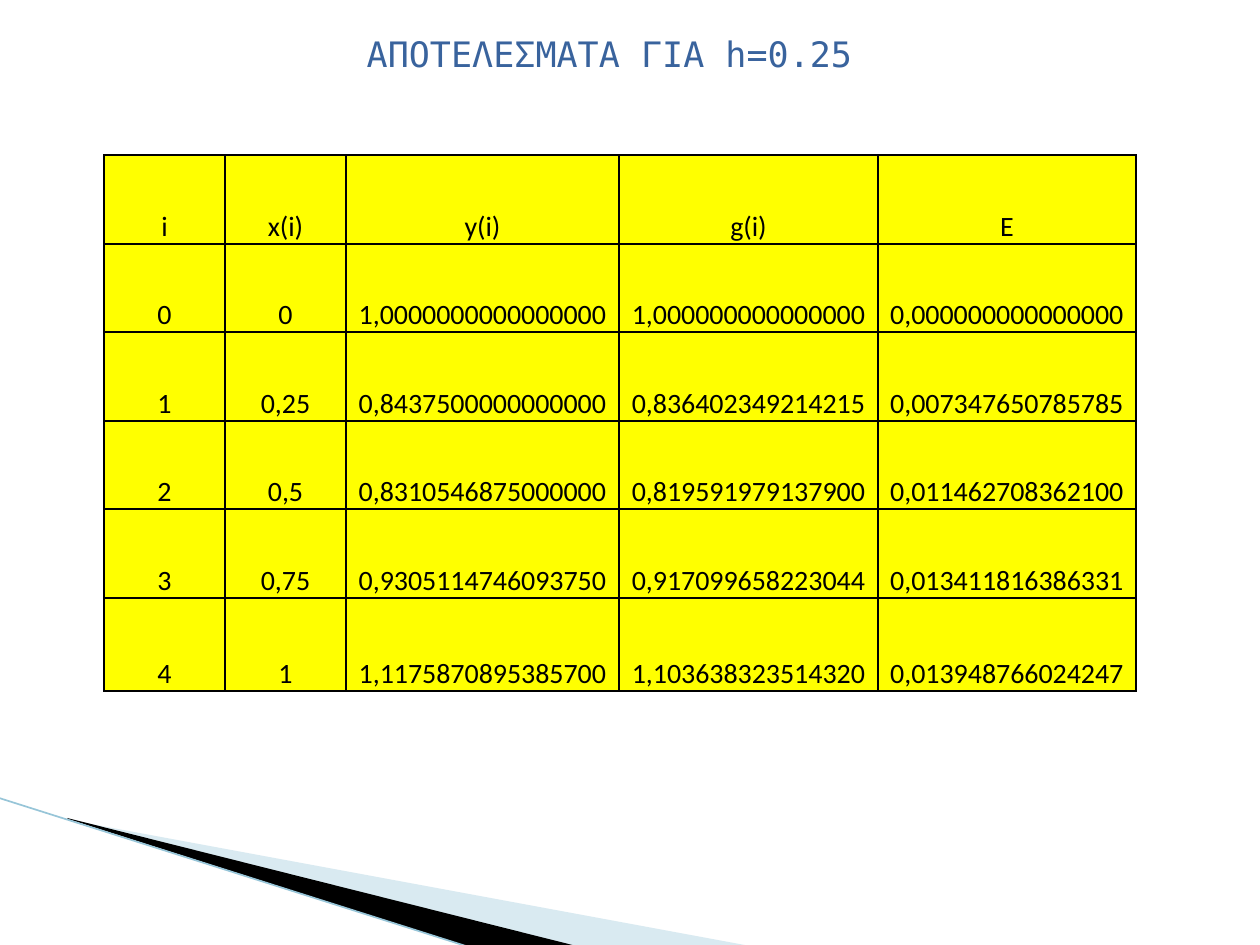
from dataclasses import dataclass

import pptx
import pptx.dml.color
import pptx.enum.shapes
import pptx.enum.text
import pptx.oxml
import pptx.oxml.ns
import pptx.oxml.xmlchemy
import pptx.util
from lxml import etree

RGBColor = pptx.dml.color.RGBColor
BLACK = RGBColor(0x00, 0x00, 0x00)
YELLOW = RGBColor(0xFF, 0xFF, 0x00)
PALE_BLUE = RGBColor(0xA0, 0xCB, 0xDC)
LINE_BLUE = RGBColor(0x97, 0xC5, 0xD8)
TITLE_BLUE = RGBColor(0x39, 0x63, 0x9D)

EMU_PER_PX = 914400 / 126
COLUMN_WIDTHS = (121, 121, 273, 259, 258)
ROW_HEIGHTS = (89, 88, 89, 88, 89, 93)
RESULTS = (
    ("i", "x(i)", "y(i)", "g(i)", "E"),
    ("0", "0", "1,0000000000000000", "1,000000000000000", "0,000000000000000"),
    ("1", "0,25", "0,8437500000000000", "0,836402349214215", "0,007347650785785"),
    ("2", "0,5", "0,8310546875000000", "0,819591979137900", "0,011462708362100"),
    ("3", "0,75", "0,9305114746093750", "0,917099658223044", "0,013411816386331"),
    ("4", "1", "1,1175870895385700", "1,103638323514320", "0,013948766024247"),
)


@dataclass(frozen=True)
class Wedge:
    points: tuple[tuple[int, int], ...]
    color: RGBColor
    opacity: int


WEDGES = (
    Wedge(((69, 820), (750, 946), (575, 946), (69, 819)), PALE_BLUE, 40),
    Wedge(((67, 818), (576, 946), (469, 947), (68, 819)), BLACK, 100),
)


def px(length: int) -> pptx.util.Emu:
    return pptx.util.Emu(round(length * EMU_PER_PX))


def draw_wedge(slide: pptx.slide.Slide, wedge: Wedge) -> None:
    start, *others = wedge.points
    builder = slide.shapes.build_freeform(*start, scale=EMU_PER_PX)
    builder.add_line_segments(others, close=True)
    shape = builder.convert_to_shape()
    shape.shadow.inherit = False
    shape.line.fill.background()
    shape.fill.solid()
    shape.fill.fore_color.rgb = wedge.color
    if wedge.opacity < 100:
        color = shape.fill._xPr.find(".//" + pptx.oxml.ns.qn("a:srgbClr"))
        alpha = etree.SubElement(color, pptx.oxml.ns.qn("a:alpha"))
        alpha.set("val", str(wedge.opacity * 1000))


def draw_edge_line(slide: pptx.slide.Slide) -> None:
    connector = slide.shapes.add_connector(
        pptx.enum.shapes.MSO_CONNECTOR.STRAIGHT, px(-1), px(798), px(469), px(947)
    )
    connector.line.color.rgb = LINE_BLUE
    connector.line.width = pptx.util.Pt(0.95)
    etree.SubElement(connector._element.spPr, pptx.oxml.ns.qn("a:effectLst"))


def format_title(slide: pptx.slide.Slide) -> None:
    title = slide.shapes.title
    title.left, title.top, title.width, title.height = px(292), px(26), px(635), px(55)
    text_frame = title.text_frame
    text_frame.text = "ΑΠΟΤΕΛΕΣΜΑΤΑ ΓΙΑ h=0.25"
    text_frame.word_wrap = True
    text_frame.auto_size = pptx.enum.text.MSO_AUTO_SIZE.SHAPE_TO_FIT_TEXT
    paragraph = text_frame.paragraphs[0]
    paragraph.alignment = pptx.enum.text.PP_ALIGN.CENTER
    font = paragraph.runs[0].font
    font.name = "DejaVu Sans Mono"
    font.size = pptx.util.Pt(20)
    font.color.rgb = TITLE_BLUE


def add_borders(cell: pptx.table._Cell) -> None:
    properties = cell._tc.get_or_add_tcPr()
    for side in ("lnL", "lnR", "lnT", "lnB"):
        border = etree.SubElement(properties, pptx.oxml.ns.qn(f"a:{side}"))
        border.set("w", str(pptx.util.Pt(1)))
        fill = etree.SubElement(border, pptx.oxml.ns.qn("a:solidFill"))
        color = etree.SubElement(fill, pptx.oxml.ns.qn("a:srgbClr"))
        color.set("val", str(BLACK))


def format_cell(cell: pptx.table._Cell, text: str) -> None:
    add_borders(cell)
    cell.fill.solid()
    cell.fill.fore_color.rgb = YELLOW
    cell.vertical_anchor = pptx.enum.text.MSO_ANCHOR.BOTTOM
    cell.margin_left = cell.margin_right = px(9)
    cell.margin_top = cell.margin_bottom = 0
    cell.text_frame.text = text
    paragraph = cell.text_frame.paragraphs[0]
    paragraph.alignment = pptx.enum.text.PP_ALIGN.CENTER
    paragraph.line_spacing = 1.15
    font = paragraph.runs[0].font
    font.name = "Calibri"
    font.size = pptx.util.Pt(16)
    font.color.rgb = BLACK


def draw_results(slide: pptx.slide.Slide) -> None:
    table = slide.shapes.add_table(
        len(ROW_HEIGHTS),
        len(COLUMN_WIDTHS),
        px(104),
        px(155),
        px(sum(COLUMN_WIDTHS)),
        px(sum(ROW_HEIGHTS)),
    ).table
    table.first_row = False
    table.horz_banding = False
    for column, width in zip(table.columns, COLUMN_WIDTHS):
        column.width = px(width)
    for row, height, values in zip(table.rows, ROW_HEIGHTS, RESULTS):
        row.height = px(height)
        for cell, value in zip(row.cells, values):
            format_cell(cell, value)


def main() -> None:
    presentation = pptx.Presentation()
    presentation.slide_width = px(1260)
    presentation.slide_height = px(945)
    slide = presentation.slides.add_slide(presentation.slide_layouts[5])
    for wedge in WEDGES:
        draw_wedge(slide, wedge)
    draw_edge_line(slide)
    format_title(slide)
    draw_results(slide)
    presentation.save("out.pptx")


if __name__ == "__main__":
    main()
